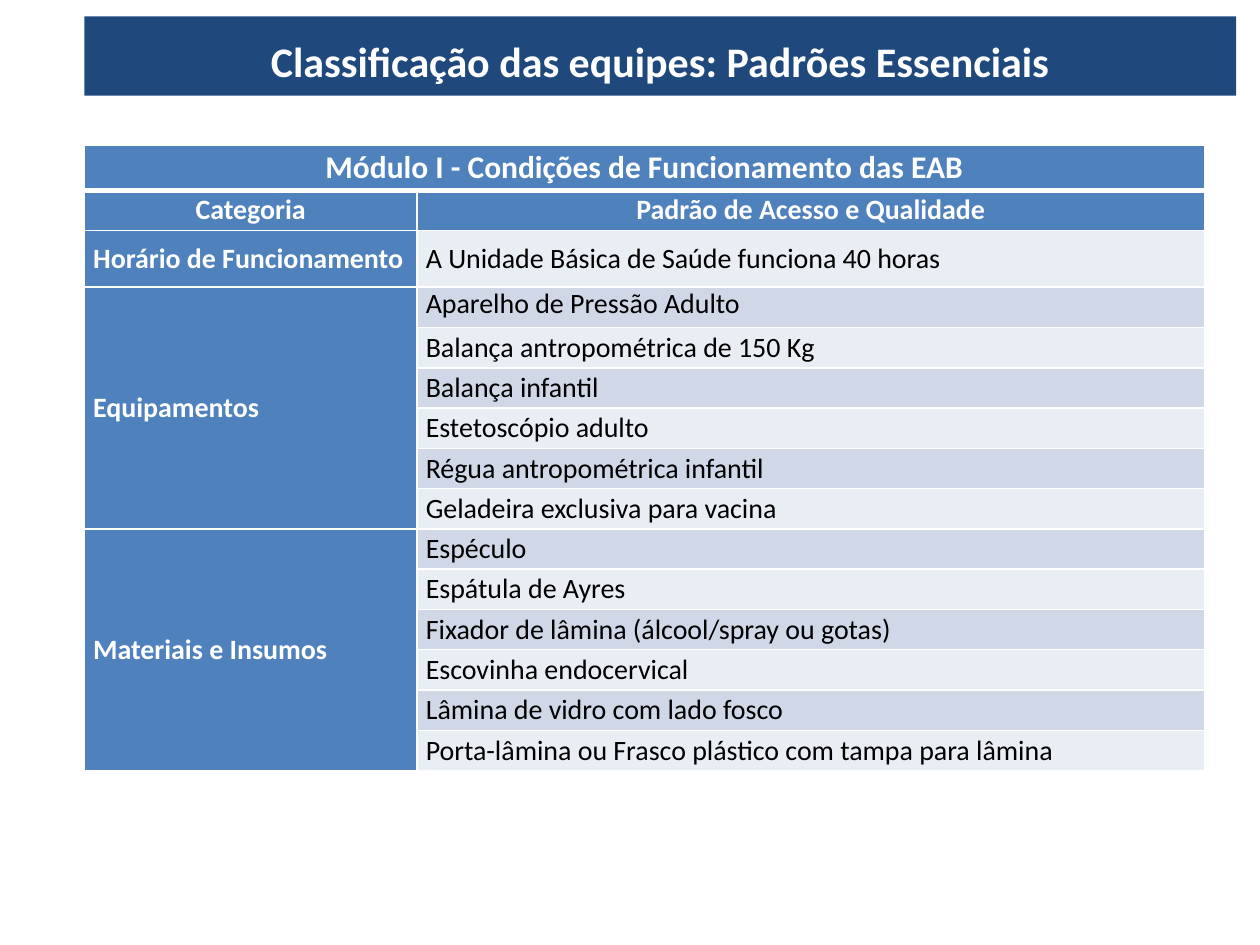
from itertools import accumulate, cycle
from pptx import Presentation, util as u
from pptx.dml.color import RGBColor
from pptx.enum import text
from pptx.oxml import parse_xml
from pptx.oxml.ns import nsdecls

# Content
TITLE = "Classificação das equipes: Padrões Essenciais"
MODULE = "Módulo I - Condições de Funcionamento das EAB"
HEADINGS = ("Categoria", "Padrão de Acesso e Qualidade")
STANDARDS = {
    "Horário de Funcionamento": ["A Unidade Básica de Saúde funciona 40 horas"],
    "Equipamentos": [
        "Aparelho de Pressão Adulto",
        "Balança antropométrica de 150 Kg",
        "Balança infantil",
        "Estetoscópio adulto",
        "Régua antropométrica infantil",
        "Geladeira exclusiva para vacina",
    ],
    "Materiais e Insumos": [
        "Espéculo",
        "Espátula de Ayres",
        "Fixador de lâmina (álcool/spray ou gotas)",
        "Escovinha endocervical",
        "Lâmina de vidro com lado fosco",
        "Porta-lâmina ou Frasco plástico com tampa para lâmina",
    ],
}

# Theme and layout, lengths in inches
THEME = {
    "font": "Calibri", "banner": "1F497D", "head": "4F81BD",
    "bands": ("E9EDF4", "D0D8E8"), "light": "FFFFFF", "dark": "000000",
    "title_size": 24, "module_size": 18, "body_size": 16,
}
LEFT = 0.67
BANNER = {"left": LEFT, "top": 0.13, "width": 9.14, "height": 0.63}
TABLE_TOP = 1.15
COLUMNS = (2.64, 6.25)
MODULE_HEIGHT, HOURS_HEIGHT, ROW_HEIGHT = 0.36, 0.45, 0.32
CENTER, START = text.PP_ALIGN.CENTER, text.PP_ALIGN.LEFT
MIDDLE, TOP = text.MSO_ANCHOR.MIDDLE, text.MSO_ANCHOR.TOP


def set_all(target, values):
    for name, value in values.items():
        setattr(target, name, value)


def paint(part, color):
    part.fill.solid()
    part.fill.fore_color.rgb = RGBColor.from_string(color)


def write(part, words, size, color, bold, align):
    part.text_frame.text = words
    line = part.text_frame.paragraphs[0]
    line.alignment = align
    font = line.runs[0].font
    set_all(font, {"name": THEME["font"], "size": u.Pt(size), "bold": bold})
    font.color.rgb = RGBColor.from_string(color)


def add_borders(cell, **widths):
    """Draw white borders; widths in points override the 1 pt default."""
    props = cell._tc.get_or_add_tcPr()
    for place, side in enumerate("LRTB"):
        width = u.Pt(widths.get(side, 1))
        props.insert(place, parse_xml(
            f'<a:ln{side} {nsdecls("a")} w="{width}"><a:solidFill>'
            f'<a:srgbClr val="{THEME["light"]}"/></a:solidFill></a:ln{side}>'))


def fill_cell(cell, words, fill, size=THEME["body_size"], color=THEME["light"],
              bold=True, align=START, anchor=MIDDLE):
    set_all(cell, {"margin_left": u.Inches(0.07), "margin_right": u.Inches(0.07),
                   "margin_top": 0, "margin_bottom": 0, "vertical_anchor": anchor})
    paint(cell, fill)
    write(cell, words, size, color, bold, align)


deck = Presentation()
set_all(deck, {"slide_width": u.Inches(10), "slide_height": u.Inches(7.5)})
slide = deck.slides.add_slide(deck.slide_layouts[5])

# Title banner
banner = slide.shapes.title
set_all(banner, {side: u.Inches(length) for side, length in BANNER.items()})
paint(banner, THEME["banner"])
write(banner, TITLE, THEME["title_size"], THEME["light"], True, CENTER)
set_all(banner.text_frame, {"vertical_anchor": MIDDLE, "word_wrap": True,
                            "auto_size": text.MSO_AUTO_SIZE.NONE,
                            "margin_top": u.Inches(0.12)})

# Table grid
counts = [len(items) for items in STANDARDS.values()]
heights = [MODULE_HEIGHT, ROW_HEIGHT, HOURS_HEIGHT] + [ROW_HEIGHT] * (sum(counts) - 1)
standards = slide.shapes.add_table(
    len(heights), len(COLUMNS), u.Inches(LEFT), u.Inches(TABLE_TOP),
    u.Inches(sum(COLUMNS)), u.Inches(sum(heights))).table
for column, width in zip(standards.columns, COLUMNS):
    column.width = u.Inches(width)
for row, height in zip(standards.rows, heights):
    row.height = u.Inches(height)

# Module heading and column headings
standards.cell(0, 0).merge(standards.cell(0, 1))
fill_cell(standards.cell(0, 0), MODULE, THEME["head"], THEME["module_size"], align=CENTER)
for column, heading in enumerate(HEADINGS):
    fill_cell(standards.cell(1, column), heading, THEME["head"], align=CENTER)

# Categories with their banded standards
bands = cycle(THEME["bands"])
starts = accumulate(counts, initial=2)
for start, (category, items) in zip(starts, STANDARDS.items()):
    if len(items) > 1:
        standards.cell(start, 0).merge(standards.cell(start + len(items) - 1, 0))
    fill_cell(standards.cell(start, 0), category, THEME["head"])
    for row, item in enumerate(items, start):
        fill_cell(standards.cell(row, 1), item, next(bands), color=THEME["dark"],
                  bold=False, anchor=TOP if row == 3 else MIDDLE)

# Borders, with a heavy rule under the module heading
RULES = {0: {"B": 3}, 1: {"T": 3}}
for row in range(len(heights)):
    for column in range(len(COLUMNS)):
        add_borders(standards.cell(row, column), **RULES.get(row, {}))

deck.save("out.pptx")
